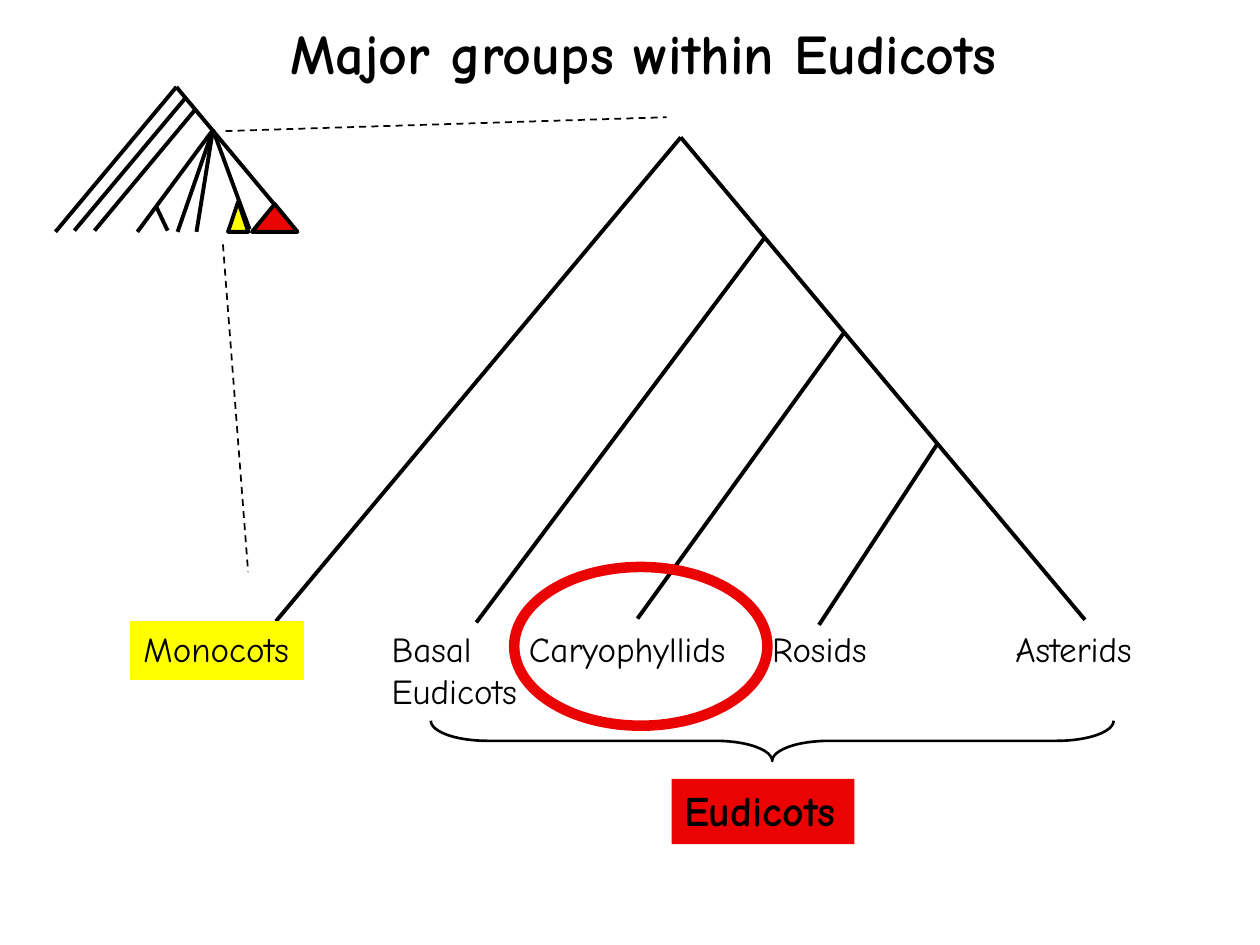
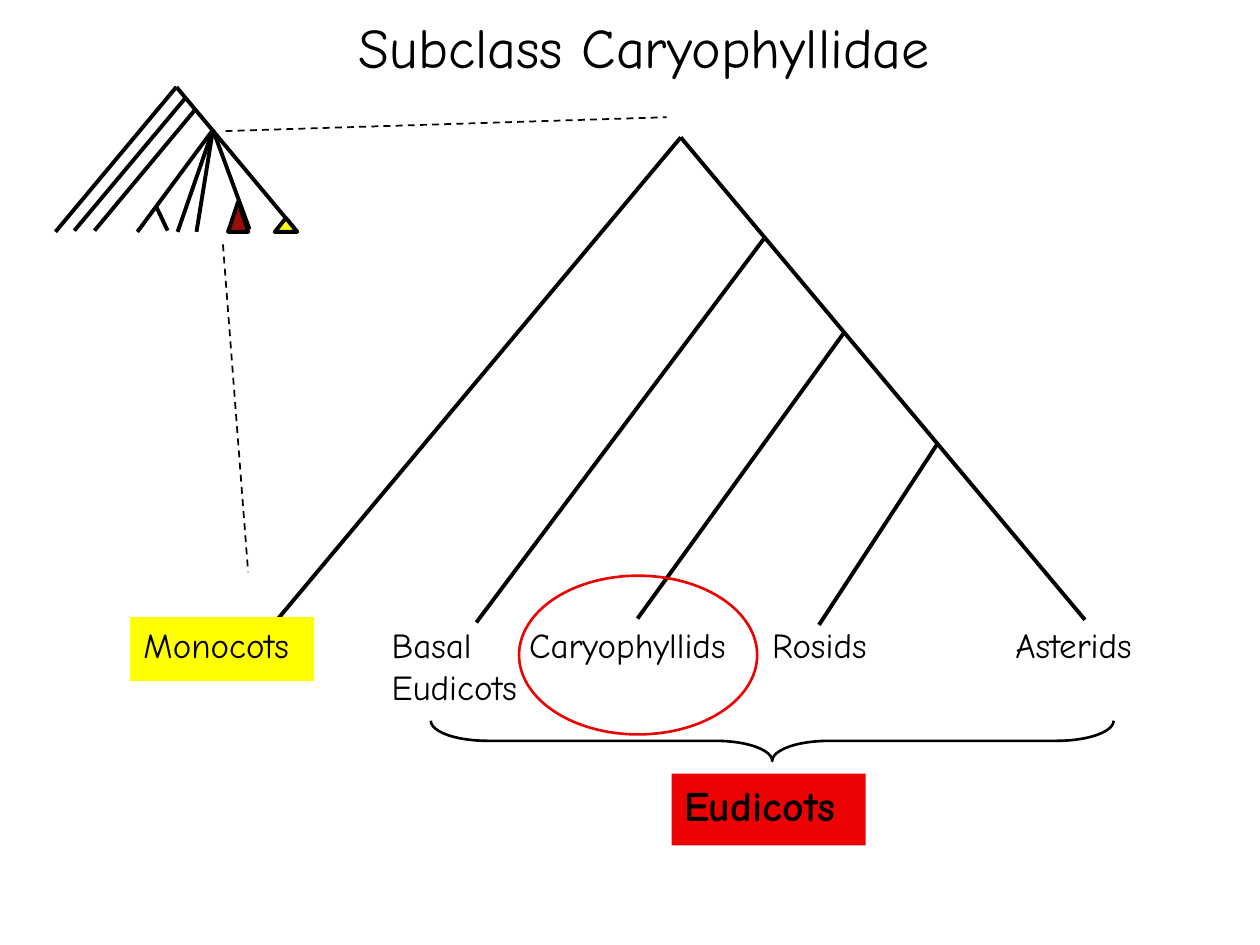
"""Builds two slides that place the Caryophyllids within the eudicot tree."""
import lxml.etree
import pptx
import pptx.dml.color
import pptx.enum.dml
import pptx.enum.shapes
import pptx.enum.text
import pptx.oxml.ns
import pptx.util

BLACK, RED, YELLOW, MAROON = "000000", "EB0202", "FFFF00", "990E09"
FONT = "Comic Neue"
BRANCH = 2.25

SLIDES = [
    {
        "title": "Major groups within Eudicots", "title_box": (146.2, 7.2, 443.5, 47.5),
        "title_bold": True, "label_top": 355, "label_heights": (32.4, 57.6),
        "label_widths": (88.6, 134.6, 69.1, 88.6),
        "monocots": (74.9, 355, 98.6, 33.1), "eudicots": (383.8, 445, 104.4, 37.4),
        "clades": [((157, 116.6), 144, RED), ((136.1, 115.2), 130.3, YELLOW)],
        "highlight": (293.8, 324, 144.7, 90.7), "highlight_width": 6,
    },
    {
        "title": "Subclass Caryophyllidae", "title_box": (182.9, 3.6, 370.8, 51.8),
        "title_bold": False, "label_top": 352.8, "label_heights": (35.3, 63.4),
        "label_widths": (94.3, 138.2, 74.2, 95.8),
        "monocots": (74.9, 352.8, 104.4, 36), "eudicots": (383.8, 442.1, 110.9, 41),
        "clades": [((163.4, 124.6), 157, YELLOW), ((136.1, 115.2), 130.3, MAROON)],
        "highlight": (296.6, 329, 136.1, 90.7), "highlight_width": 1.5,
    },
]

LABELS = [(216.7, ["Basal", "Eudicots"]), (295.2, ["Caryophyllids"]),
          (434.2, ["Rosids"]), (573.1, ["Asterids"])]

APEX, ASTERIDS_TIP, MONOCOTS_TIP = (389, 78.5), (620, 354.2), (157.7, 355)
SIDE_BRANCHES = [(437, (272.2, 355.7)), (482.4, (364.3, 353.5)), (535.7, (468, 357.1))]

OVERVIEW_BASE = 132.5
OVERVIEW_APEX, OVERVIEW_NODE = (100.8, 49.7), (121.7, 74.2)
OVERVIEW_BRANCHES = [
    (OVERVIEW_APEX, (169.9, OVERVIEW_BASE)),
    (OVERVIEW_APEX, (31.7, OVERVIEW_BASE)),
    ((105.8, 56.2), (42.5, 131.8)),
    ((111.6, 62.6), (54, 131.8)),
    ((89.3, 118.1), (95.8, 131.8)),
    (OVERVIEW_NODE, (142.6, 131)),
] + [(OVERVIEW_NODE, (tip, OVERVIEW_BASE)) for tip in (78.5, 101.5, 112.3)]

ZOOM_LINES = [((127.4, 139.7), (141.8, 326.9)), ((128.9, 74.9), (380.9, 67))]
BRACE_BOX = (429.8, 228.2, 23, 390.2)


def points(values):
    return [pptx.util.Pt(value) for value in values]


def color(hex_code):
    return pptx.dml.color.RGBColor.from_string(hex_code)


def paint(shape, fill=None, line=None, width=0.75):
    shape.shadow.inherit = False
    if fill:
        shape.fill.solid()
        shape.fill.fore_color.rgb = color(fill)
    else:
        shape.fill.background()
    if line:
        shape.line.color.rgb = color(line)
        shape.line.width = pptx.util.Pt(width)
    else:
        shape.line.fill.background()
    return shape


def add_line(shapes, start, end, width=BRANCH, dashed=False):
    connector = shapes.add_connector(
        pptx.enum.shapes.MSO_CONNECTOR.STRAIGHT, *points(start + end))
    connector.line.color.rgb = color(BLACK)
    connector.line.width = pptx.util.Pt(width)
    if dashed:
        connector.line.dash_style = pptx.enum.dml.MSO_LINE.DASH
    lxml.etree.SubElement(connector._element.spPr, pptx.oxml.ns.qn("a:effectLst"))


def add_shape(shapes, kind, box, **style):
    preset = getattr(pptx.enum.shapes.MSO_SHAPE, kind)
    return paint(shapes.add_shape(preset, *points(box)), **style)


def write(shape, lines, size=20, bold=False, centered=False):
    frame = shape.text_frame
    frame.word_wrap = True
    frame.vertical_anchor = pptx.enum.text.MSO_ANCHOR.TOP
    if not centered:
        frame.margin_right = 0
    frame.text = "\n".join(lines)
    align = pptx.enum.text.PP_ALIGN
    for paragraph in frame.paragraphs:
        paragraph.alignment = align.CENTER if centered else align.LEFT
        font = paragraph.font
        font.name, font.size, font.bold = FONT, pptx.util.Pt(size), bold
        font.color.rgb = color(BLACK)


def add_tree(shapes):
    slope = (ASTERIDS_TIP[1] - APEX[1]) / (ASTERIDS_TIP[0] - APEX[0])
    add_line(shapes, APEX, ASTERIDS_TIP)
    add_line(shapes, APEX, MONOCOTS_TIP)
    for node_x, tip in SIDE_BRANCHES:
        add_line(shapes, (node_x, APEX[1] + slope * (node_x - APEX[0])), tip)


def add_overview(shapes, clades):
    overview = shapes.add_group_shape().shapes
    for start, end in OVERVIEW_BRANCHES:
        add_line(overview, start, end)
    for top, left, fill in clades:
        right = 2 * top[0] - left
        outline = overview.build_freeform(*points(top), scale=1.0)
        outline.add_line_segments(
            [points((left, OVERVIEW_BASE)), points((right, OVERVIEW_BASE))], close=True)
        paint(outline.convert_to_shape(), fill=fill, line=BLACK, width=BRANCH)


def add_labels(shapes, content):
    single, double = content["label_heights"]
    for (left, lines), width in zip(LABELS, content["label_widths"]):
        height = double if len(lines) > 1 else single
        write(shapes.add_textbox(*points((left, content["label_top"], width, height))), lines)


def build_slide(deck, content):
    shapes = deck.slides.add_slide(deck.slide_layouts[6]).shapes
    write(shapes.add_textbox(*points(content["title_box"])), [content["title"]],
          size=32, bold=content["title_bold"], centered=True)
    add_tree(shapes)
    monocots = add_shape(shapes, "RECTANGLE", content["monocots"], fill=YELLOW, line=YELLOW)
    write(monocots, ["Monocots"])
    add_labels(shapes, content)
    brace = add_shape(shapes, "LEFT_BRACE", BRACE_BOX, line=BLACK, width=1.5)
    brace.rotation = 270
    brace.adjustments[0], brace.adjustments[1] = 1.413, 0.5
    eudicots = add_shape(shapes, "RECTANGLE", content["eudicots"], fill=RED)
    write(eudicots, ["Eudicots"], size=24, bold=True)
    add_overview(shapes, content["clades"])
    for start, end in ZOOM_LINES:
        add_line(shapes, start, end, width=1, dashed=True)
    add_shape(shapes, "OVAL", content["highlight"], line=RED, width=content["highlight_width"])


def main():
    deck = pptx.Presentation()
    deck.slide_width, deck.slide_height = points((720, 540))
    for content in SLIDES:
        build_slide(deck, content)
    deck.save("out.pptx")


if __name__ == "__main__":
    main()
